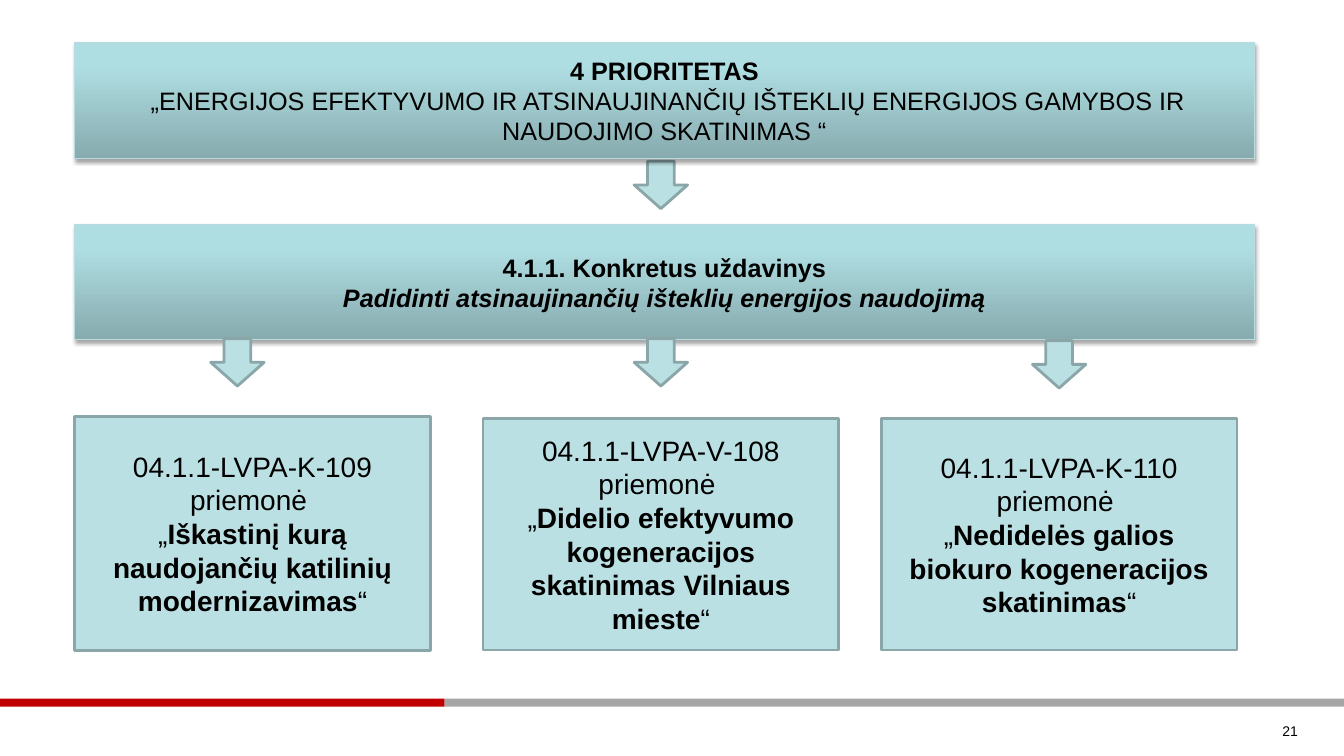
from lxml.etree import SubElement
from pptx import Presentation
from pptx.dml.color import RGBColor
from pptx.enum.shapes import MSO_SHAPE
from pptx.enum.text import MSO_ANCHOR, PP_ALIGN
from pptx.oxml import parse_xml
from pptx.oxml.ns import nsdecls, qn
from pptx.util import Inches, Pt

FILL, EDGE, BAND_EDGE = "BBE0E3", "8AA6A8", "B6DCDF"
BAND_STOPS = [(0, "87ABAE"), (80, "AFDEE2"), (100, "AFE0E4")]
LEFT, BAND_W, BOX_W, BOX_BOTTOM = 0.74, 11.7, 3.53, 6.45
ARROW_W, ARROW_H = 0.53, 0.47

# left, top, arrow left, arrow top, code, title
MEASURES = [
    (LEFT, 4.13, 2.09, 3.36, "04.1.1-LVPA-K-109",
     "Iškastinį kurą naudojančių katilinių modernizavimas"),
    (4.79, 4.15, 6.29, 3.36, "04.1.1-LVPA-V-108",
     "Didelio efektyvumo kogeneracijos skatinimas Vilniaus mieste"),
    (8.74, 4.15, 10.24, 3.38, "04.1.1-LVPA-K-110",
     "Nedidelės galios biokuro kogeneracijos skatinimas"),
]


def color(value):
    return RGBColor.from_string(value)


def add_block(s, kind, x, y, w, h, fill=FILL, edge=EDGE, weight=2):
    sp = s.shapes.add_shape(kind, Inches(x), Inches(y), Inches(w), Inches(h))
    sp.shadow.inherit = False
    sp.fill.solid()
    sp.fill.fore_color.rgb = color(fill)
    if edge:
        sp.line.color.rgb = color(edge)
        sp.line.width = Pt(weight)
    else:
        sp.line.fill.background()
    return sp


def write(sp, paragraphs, size, align=PP_ALIGN.CENTER):
    """Fill a shape with paragraphs, each a list of (text, bold, italic) runs."""
    tf = sp.text_frame
    tf.word_wrap = True
    tf.vertical_anchor = MSO_ANCHOR.MIDDLE
    for i, runs in enumerate(paragraphs):
        p = tf.add_paragraph() if i else tf.paragraphs[0]
        p.alignment = align
        p.font.name = "Arial"
        p.font.size = Pt(size)
        p.font.color.rgb = color("000000")
        for text, bold, italic in runs:
            r = p.add_run()
            r.text = text
            r.font.bold = bold
            r.font.italic = italic


def add_band(s, y, h, paragraphs):
    """Full-width heading with a vertical gradient and a soft shadow."""
    sp = add_block(s, MSO_SHAPE.RECTANGLE, LEFT, y, BAND_W, h, edge=BAND_EDGE, weight=0.75)
    stops = "".join(f'<a:gs pos="{pos * 1000}"><a:srgbClr val="{value}"/></a:gs>'
                    for pos, value in BAND_STOPS)
    gradient = parse_xml(f'<a:gradFill {nsdecls("a")} rotWithShape="1"><a:gsLst>{stops}</a:gsLst>'
                         '<a:lin ang="16200000" scaled="0"/></a:gradFill>')
    spPr = sp._element.spPr
    spPr.replace(spPr.find(qn("a:solidFill")), gradient)
    shadow = SubElement(spPr.find(qn("a:effectLst")), qn("a:outerShdw"),
                        blurRad=str(Pt(3.1)), dist=str(Pt(1.8)), dir="5400000", rotWithShape="0")
    black = SubElement(shadow, qn("a:srgbClr"), val="000000")
    SubElement(black, qn("a:alpha"), val="35000")
    write(sp, paragraphs, 18)


def add_arrow(s, x, y):
    add_block(s, MSO_SHAPE.DOWN_ARROW, x, y, ARROW_W, ARROW_H)


def add_measure(s, x, y, code, title):
    sp = add_block(s, MSO_SHAPE.RECTANGLE, x, y, BOX_W, BOX_BOTTOM - y)
    write(sp, [[(f"{code} priemonė ", False, False)],
               [("„", False, False), (title, True, False), ("“", False, False)]], 20)


def add_footer(s, y, number):
    for x, w, fill in [(0, 4.41, "C00000"), (4.41, 8.92, "A6A6A6")]:
        add_block(s, MSO_SHAPE.RECTANGLE, x, y, w, 0.08, fill, edge=None)
    tb = s.shapes.add_textbox(Inches(9.86), Inches(y + 0.08), Inches(3.11), Inches(0.49))
    write(tb, [[(number, False, False)]], 10, PP_ALIGN.RIGHT)


def main():
    prs = Presentation()
    prs.slide_width, prs.slide_height = Inches(13.33), Inches(7.5)
    s = prs.slides.add_slide(prs.slide_layouts[6])
    add_footer(s, 6.93, "21")
    add_band(s, 2.23, 1.14, [
        [("4.1.1. Konkretus uždavinys", True, False)],
        [("Padidinti atsinaujinančių išteklių energijos naudojimą", True, True)]])
    add_arrow(s, 6.29, 1.6)
    add_band(s, 0.42, 1.15, [
        [("4 PRIORITETAS", True, False)],
        [(" „ENERGIJOS EFEKTYVUMO IR ATSINAUJINANČIŲ IŠTEKLIŲ ENERGIJOS GAMYBOS IR "
          "NAUDOJIMO SKATINIMAS “", False, False)]])
    for x, y, arrow_x, arrow_y, code, title in MEASURES:
        add_arrow(s, arrow_x, arrow_y)
        add_measure(s, x, y, code, title)
    prs.save("out.pptx")


if __name__ == "__main__":
    main()
